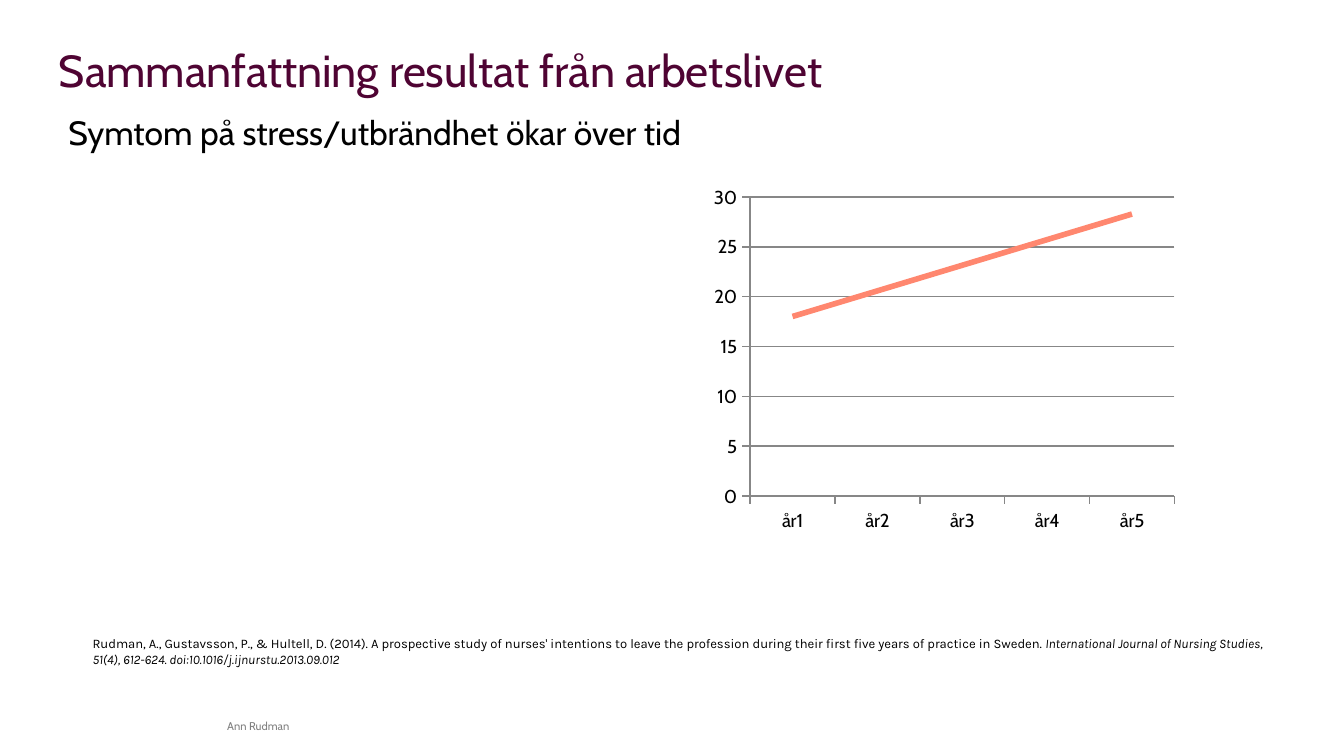
"""Build the slide on stress symptoms during the first working years."""
from lxml.etree import fromstring
from pptx import Presentation
from pptx.chart.data import CategoryChartData
from pptx.dml.color import RGBColor
from pptx.enum.chart import XL_CHART_TYPE, XL_MARKER_STYLE, XL_TICK_MARK
from pptx.oxml.ns import nsdecls
from pptx.util import Inches, Pt

PLUM, CORAL, BLACK, GREY, AXIS_GREY = "4F0433", "FF876F", "000000", "808080", "878787"

REFERENCE = (
    "Rudman, A., Gustavsson, P., & Hultell, D. (2014). A prospective study of nurses' "
    "intentions to leave the profession during their first five years of practice in Sweden. "
)
JOURNAL = "International Journal of Nursing Studies, 51(4), 612-624. doi:10.1016/j.ijnurstu.2013.09.012"

# (left, top, width, height), inset, size, font, colour, (text, italic) runs
TEXTS = [
    ((0.34, 0.27, 7.01, 0.5), (0.1, 0.05), 24, "Cabin", PLUM,
     [("Sammanfattning resultat från arbetslivet", False)]),
    ((0.41, 0.78, 7.37, 1.11), (0.1, 0.05), 18, "Cabin", BLACK,
     [("Symtom på stress/utbrändhet ökar över tid", False)]),
    ((0.59, 4.68, 9.02, 0.44), (0.1, 0.05), 7, "Karla", BLACK,
     [(REFERENCE, False), (JOURNAL, True)]),
    ((1.62, 5.31, 2.38, 0.19), (0.07, 0.04), 6, "Cabin", GREY,
     [("Ann Rudman", False)]),
]
YEARS = ["år1", "år2", "år3", "år4", "år5"]
SYMPTOMS = [19, 19.6, 22.1, 26.9, 28.2]
CHART_PLACE = (5.24, 1.33, 3.57, 2.68)


def colour(code):
    return RGBColor.from_string(code)


def add_text(slide, place, inset, size, font, ink, runs):
    frame = slide.shapes.add_textbox(*map(Inches, place)).text_frame
    frame.word_wrap = True
    frame.margin_left = frame.margin_right = Inches(inset[0])
    frame.margin_top = frame.margin_bottom = Inches(inset[1])
    for words, italic in runs:
        run = frame.paragraphs[0].add_run()
        run.text = words
        run.font.size = Pt(size)
        run.font.name = font
        run.font.italic = italic
        run.font.color.rgb = colour(ink)


def add_trend(series):
    trend = fromstring(
        f'<c:trendline {nsdecls("c", "a")}><c:spPr><a:ln w="{Pt(3)}"><a:solidFill>'
        f'<a:srgbClr val="{CORAL}"/></a:solidFill></a:ln></c:spPr>'
        '<c:trendlineType val="linear"/><c:dispRSqr val="0"/><c:dispEq val="0"/></c:trendline>'
    )
    series._element.cat.addprevious(trend)


def add_symptom_chart(slide):
    figures = CategoryChartData()
    figures.categories = YEARS
    figures.add_series("Series 1", SYMPTOMS)
    chart = slide.shapes.add_chart(
        XL_CHART_TYPE.LINE, *map(Inches, CHART_PLACE), figures).chart
    chart.has_legend = False
    chart.has_title = False
    chart.font.size = Pt(10)
    chart.font.name = "Cabin"
    chart.font.color.rgb = colour(BLACK)
    plot = chart.plots[0]
    plot.vary_by_categories = False
    series = plot.series[0]
    series.smooth = False
    series.marker.style = XL_MARKER_STYLE.NONE
    series.format.line.fill.background()
    add_trend(series)

    years, scale = chart.category_axis, chart.value_axis
    scale.minimum_scale, scale.maximum_scale, scale.major_unit = 0, 30, 5
    scale.has_major_gridlines = True
    for part in (years, scale, scale.major_gridlines):
        part.format.line.color.rgb = colour(AXIS_GREY)
        part.format.line.width = Pt(0.75)
    for axis in (years, scale):
        axis.major_tick_mark = XL_TICK_MARK.OUTSIDE


def main():
    deck = Presentation()
    deck.slide_width = Inches(10)
    deck.slide_height = deck.slide_width * 9 // 16
    slide = deck.slides.add_slide(deck.slide_layouts[6])
    for text in TEXTS:
        add_text(slide, *text)
    add_symptom_chart(slide)
    deck.save("out.pptx")


if __name__ == "__main__":
    main()
